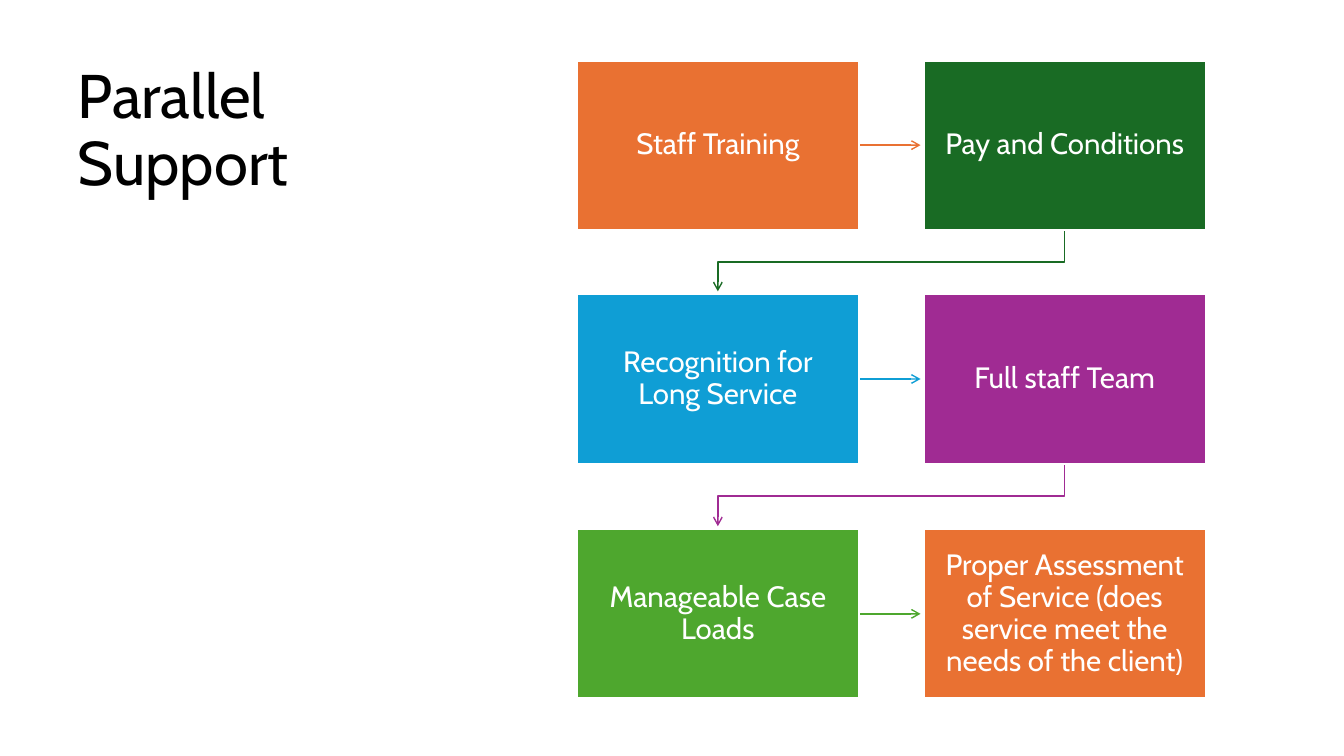
from lxml import etree
from pptx import Presentation
from pptx.dml.color import RGBColor
from pptx.enum.shapes import MSO_CONNECTOR, MSO_SHAPE
from pptx.enum.text import MSO_ANCHOR, MSO_AUTO_SIZE, PP_ALIGN
from pptx.oxml.ns import qn
from pptx.util import Pt

PX = 9144  # EMU in one px, 100 px to the inch
FONT = "Cabin"

BLACK = RGBColor(0x00, 0x00, 0x00)
WHITE = RGBColor(0xFF, 0xFF, 0xFF)
ORANGE = RGBColor(0xE9, 0x71, 0x32)
DARK_GREEN = RGBColor(0x19, 0x6B, 0x24)
BLUE = RGBColor(0x0F, 0x9E, 0xD5)
PURPLE = RGBColor(0xA0, 0x2B, 0x93)
GREEN = RGBColor(0x4E, 0xA7, 0x2E)

BOX_WIDTH, BOX_HEIGHT = 280, 168
GRID_LEFT, GRID_TOP = 572, 60
COLUMN_STEP = 344
LAST_ROW_OFFSET = 465
ARROW_GAP = 3
COLUMNS, ROWS = 2, 3

STEPS = [
    ("Staff Training", ORANGE),
    ("Pay and Conditions", DARK_GREEN),
    ("Recognition for Long Service", BLUE),
    ("Full staff Team", PURPLE),
    ("Manageable Case Loads", GREEN),
    ("Proper Assessment of Service (does service meet the needs of the client)", ORANGE),
]


def place(shape, left, top, width, height):
    shape.left, shape.top = left * PX, top * PX
    shape.width, shape.height = width * PX, height * PX


def format_text(frame, size, color, align, anchor):
    frame.word_wrap = True
    frame.auto_size = MSO_AUTO_SIZE.NONE
    frame.vertical_anchor = anchor
    for para in frame.paragraphs:
        para.alignment = align
        para.line_spacing = 0.9
        for span in para.runs:
            span.font.name = FONT
            span.font.size = Pt(size)
            span.font.color.rgb = color


def add_title(page, text):
    title = page.shapes.title
    place(title, 67, 60, 382, 633)
    title.text_frame.text = text
    format_text(title.text_frame, 44, BLACK, PP_ALIGN.LEFT, MSO_ANCHOR.TOP)


def step_corner(index):
    """Return the left and top of a step's box, filling the grid row by row."""
    row, column = divmod(index, COLUMNS)
    return (GRID_LEFT + column * COLUMN_STEP,
            GRID_TOP + row * LAST_ROW_OFFSET // (ROWS - 1))


def add_step(page, index, text, color):
    left, top = step_corner(index)
    box = page.shapes.add_shape(MSO_SHAPE.RECTANGLE, 0, 0, 0, 0)
    place(box, left, top, BOX_WIDTH, BOX_HEIGHT)
    box.shadow.inherit = False
    box.fill.solid()
    box.fill.fore_color.rgb = color
    box.line.color.rgb = WHITE
    box.line.width = Pt(1.5)
    frame = box.text_frame
    frame.text = text
    frame.margin_left = frame.margin_right = 14 * PX
    frame.margin_top = frame.margin_bottom = 14 * PX
    format_text(frame, 21, WHITE, PP_ALIGN.CENTER, MSO_ANCHOR.MIDDLE)


def style_arrow(arrow, color):
    arrow.line.color.rgb = color
    arrow.line.width = Pt(1)
    line = arrow.line._get_or_add_ln()
    etree.SubElement(line, qn("a:tailEnd"), type="arrow")


def add_across_arrow(page, index, color):
    left, top = step_corner(index)
    next_left, _ = step_corner(index + 1)
    middle = top + BOX_HEIGHT // 2
    arrow = page.shapes.add_connector(
        MSO_CONNECTOR.STRAIGHT, (left + BOX_WIDTH) * PX, middle * PX,
        (next_left - ARROW_GAP) * PX, middle * PX)
    style_arrow(arrow, color)
    etree.SubElement(arrow._element.spPr, qn("a:effectLst"))


def add_down_arrow(page, index, color):
    """Draw the bent arrow from the end of one row to the start of the next."""
    left, top = step_corner(index)
    next_left, next_top = step_corner(index + 1)
    start_x, end_x = left + BOX_WIDTH // 2, next_left + BOX_WIDTH // 2
    bottom = top + BOX_HEIGHT
    bend = (bottom + next_top) // 2
    outline = page.shapes.build_freeform(start_x, bottom, scale=PX)
    outline.add_line_segments(
        [(start_x, bend), (end_x, bend), (end_x, next_top - ARROW_GAP)], close=False)
    arrow = outline.convert_to_shape()
    arrow.fill.background()
    arrow.shadow.inherit = False
    style_arrow(arrow, color)


def main():
    deck = Presentation()
    deck.slide_width, deck.slide_height = 1333 * PX, 750 * PX
    page = deck.slides.add_slide(deck.slide_layouts[5])
    add_title(page, "Parallel Support")
    for index, (_, color) in enumerate(STEPS[:-1]):
        ends_row = index % COLUMNS == COLUMNS - 1
        add_arrow = add_down_arrow if ends_row else add_across_arrow
        add_arrow(page, index, color)
    for index, (text, color) in enumerate(STEPS):
        add_step(page, index, text, color)
    deck.save("out.pptx")


if __name__ == "__main__":
    main()
